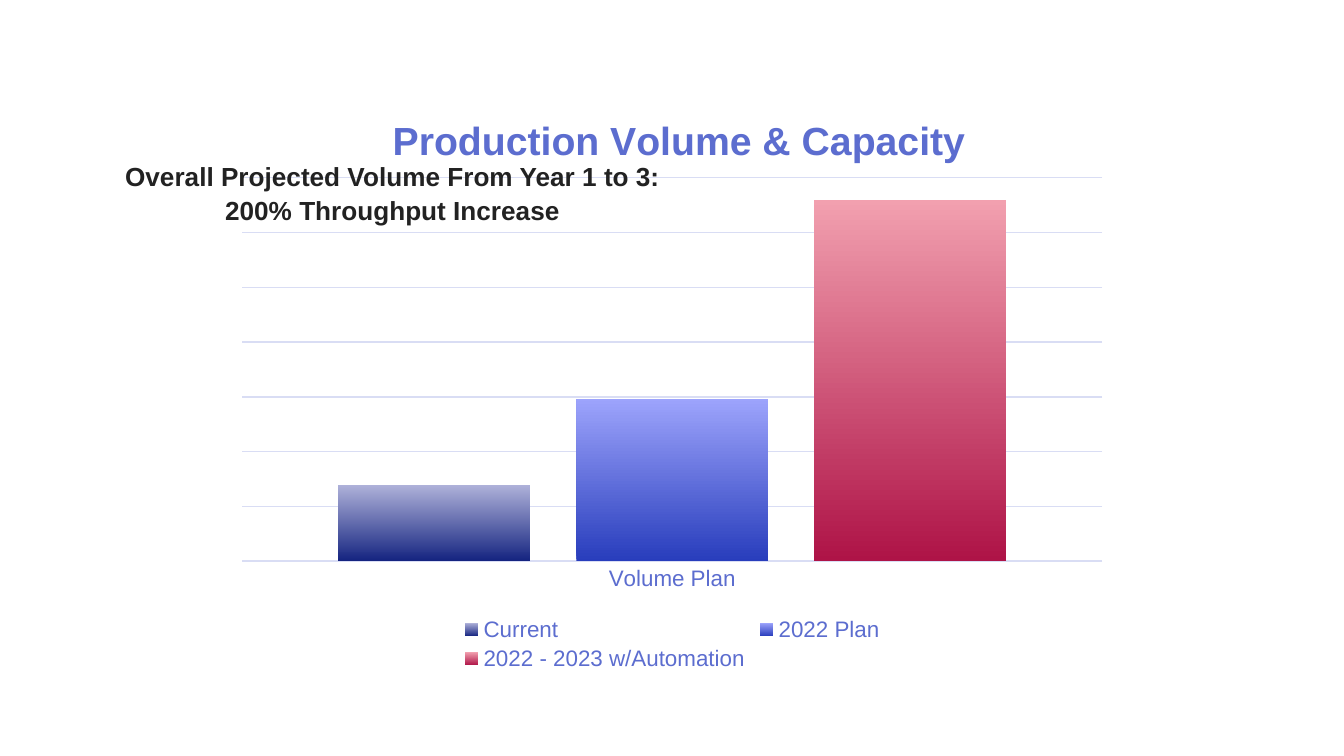
from lxml.etree import SubElement
from pptx import Presentation
from pptx.chart.data import CategoryChartData
from pptx.dml.color import RGBColor
from pptx.enum.chart import XL_CHART_TYPE, XL_LEGEND_POSITION, XL_TICK_LABEL_POSITION, XL_TICK_MARK
from pptx.enum.text import PP_ALIGN
from pptx.oxml.ns import qn
from pptx.util import Cm, Pt

COLORS = {"label": "5C6DCF", "grid": "D9DDF4", "text": "222222", "chart": "2A3990"}
FONT = "Arial"
# name, value, bottom colour, top colour
VOLUMES = [
    ("Current", 21, "152480", "AEB1D9"),
    ("2022 Plan", 45, "283DBC", "9DA4FC"),
    ("2022 - 2023 w/Automation", 100, "AE1347", "F2A0AF"),
]
GRID_STEP = 15.15
GRID_COUNT = 7


def rgb(name):
    return RGBColor.from_string(COLORS[name])


def style_font(font, size, color, bold=False):
    font.name = FONT
    font.size = Pt(size)
    font.bold = bold
    font.color.rgb = rgb(color)


def style_line(line, width):
    line.color.rgb = rgb("grid")
    line.width = Pt(width)


def set_layout(parent, after, inner=False, **fractions):
    """Place a chart part by fractions of the chart's size."""
    for old in parent.findall(qn("c:layout")):
        parent.remove(old)
    layout = SubElement(parent, qn("c:layout"))
    if after is None:
        parent.insert(0, layout)
    else:
        parent.find(qn(after)).addnext(layout)
    manual = SubElement(layout, qn("c:manualLayout"))
    if inner:
        SubElement(manual, qn("c:layoutTarget")).set("val", "inner")
    for mode in ("xMode", "yMode"):
        SubElement(manual, qn("c:" + mode)).set("val", "edge")
    for key, value in fractions.items():
        SubElement(manual, qn("c:" + key)).set("val", str(value))


def add_volume_chart(page, left, top, width, height):
    data = CategoryChartData()
    data.categories = ["Volume Plan"]
    for name, value, _, _ in VOLUMES:
        data.add_series(name, [value])
    chart = page.shapes.add_chart(
        XL_CHART_TYPE.COLUMN_CLUSTERED, left, top, width, height, data).chart
    style_font(chart.font, 10, "chart")

    chart.has_title = True
    title = chart.chart_title
    title.include_in_layout = False
    para = title.text_frame.paragraphs[0]
    para.text = "Production Volume & Capacity"
    style_font(para.font, 21, "label", bold=True)
    set_layout(title._element, "c:tx", x=0.18, y=0.05)

    plot = chart.plots[0]
    plot.vary_by_categories = False
    plot.gap_width = 100
    plot.overlap = -24
    for series, (_, _, bottom, peak) in zip(plot.series, VOLUMES):
        fill = series.format.fill
        fill.gradient()
        fill.gradient_angle = 90
        for stop, color in zip(fill.gradient_stops, (bottom, peak)):
            stop.color.rgb = RGBColor.from_string(color)
    set_layout(chart._chartSpace.chart.plotArea, None, inner=True,
               x=0.02, y=0.165, w=0.96, h=0.643)

    categories = chart.category_axis
    categories.major_tick_mark = XL_TICK_MARK.NONE
    style_font(categories.tick_labels.font, 12, "label")
    style_line(categories.format.line, 1)

    values = chart.value_axis
    values.minimum_scale = 0
    values.maximum_scale = round(GRID_STEP * GRID_COUNT, 2)
    values.major_unit = GRID_STEP
    values.tick_label_position = XL_TICK_LABEL_POSITION.NONE
    values.visible = False
    values.has_major_gridlines = True
    style_line(values.major_gridlines.format.line, 0.75)

    chart.has_legend = True
    chart.legend.position = XL_LEGEND_POSITION.BOTTOM
    chart.legend.include_in_layout = False
    style_font(chart.legend.font, 12, "label")


def add_summary(page, left, top, width, height):
    frame = page.shapes.add_textbox(left, top, width, height).text_frame
    frame.word_wrap = True
    frame.text = "Overall Projected Volume From Year 1 to 3:\n200% Throughput Increase"
    for para in frame.paragraphs:
        para.alignment = PP_ALIGN.CENTER
        para.line_spacing = 1.07
        style_font(para.font, 14, "text", bold=True)


def main():
    deck = Presentation()
    deck.slide_width, deck.slide_height = Cm(25.4), Cm(14.29)
    page = deck.slides.add_slide(deck.slide_layouts[6])
    add_volume_chart(page, Cm(4.24), Cm(1.5), Cm(16.93), Cm(11.28))
    add_summary(page, Cm(1.83), Cm(2.87), Cm(11.18), Cm(1.45))
    deck.save("out.pptx")


if __name__ == "__main__":
    main()
